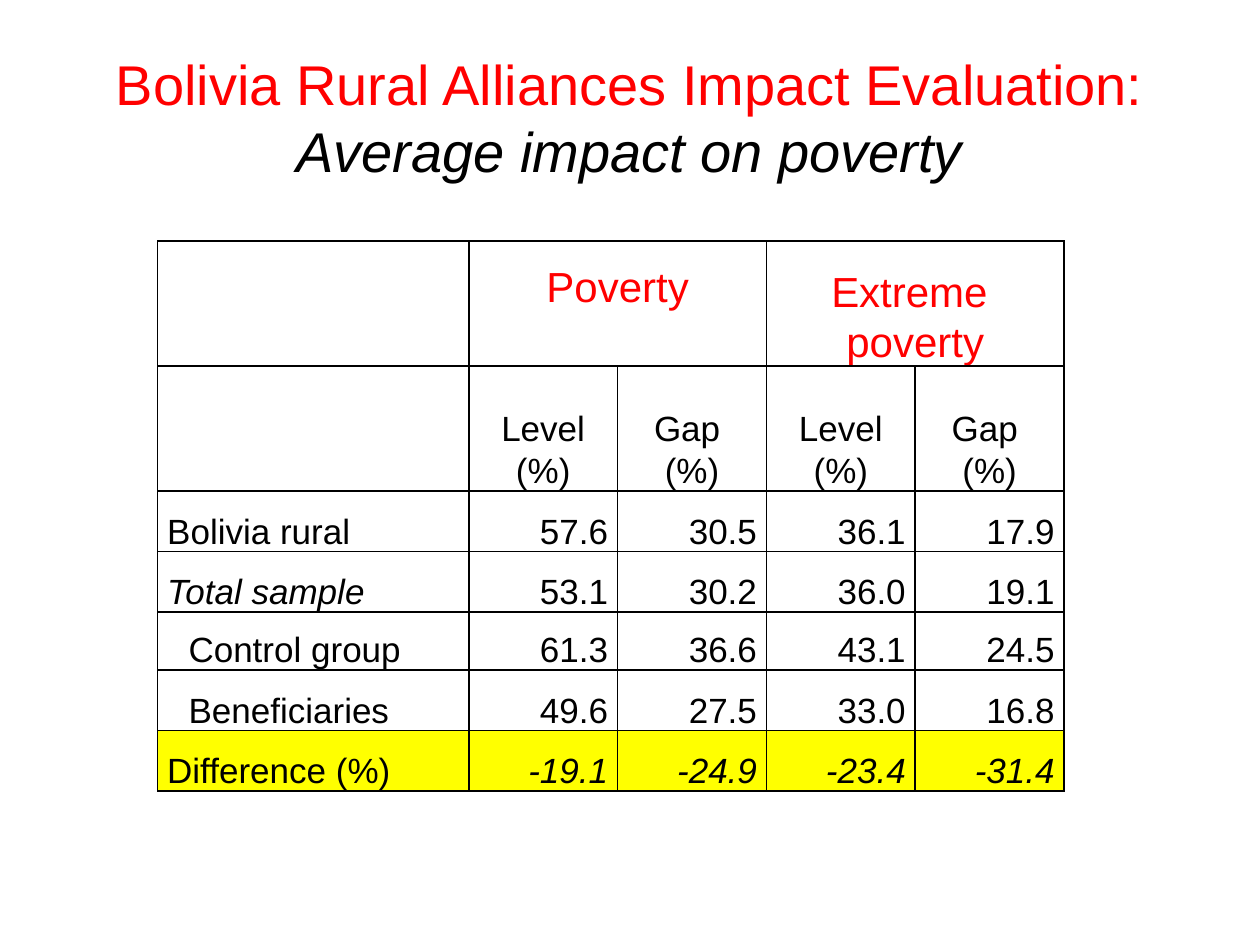
from dataclasses import dataclass

from lxml import etree
from pptx import Presentation
from pptx import util as u
from pptx.dml.color import RGBColor
from pptx.enum import text
from pptx.oxml import ns

COLORS = {"accent": "FF0000", "ink": "000000", "highlight": "FFFF00"}
FONT = "Arial"
CENTER, LEFT, RIGHT = text.PP_ALIGN.CENTER, text.PP_ALIGN.LEFT, text.PP_ALIGN.RIGHT


@dataclass(frozen=True)
class Entry:
    wording: str
    align: text.PP_ALIGN = RIGHT
    size: int = 20
    color: str = "ink"
    italic: bool = False
    indent: float = 0
    bottom: float = 0


@dataclass(frozen=True)
class Group:
    label: str
    values: tuple[str, ...]
    height: float = 1.22
    label_italic: bool = False
    values_italic: bool = False
    indent: float = 0
    fill: str | None = None


GROUPS = [
    Group("Bolivia rural", ("57.6", "30.5", "36.1", "17.9")),
    Group("Total sample", ("53.1", "30.2", "36.0", "19.1"), label_italic=True),
    Group("Control group", ("61.3", "36.6", "43.1", "24.5"), height=1.17, indent=0.43),
    Group("Beneficiaries", ("49.6", "27.5", "33.0", "16.8"), indent=0.43),
    Group("Difference (%)", ("-19.1", "-24.9", "-23.4", "-31.4"),
          values_italic=True, fill="highlight"),
]
MEASURES = {
    "Poverty": Entry("Poverty", CENTER, 24, "accent", bottom=1.1),
    "Extreme": Entry("Extreme  poverty", CENTER, 24, "accent"),
}
HEADINGS = ("Level (%)", "Gap  (%)") * len(MEASURES)
COLUMN_WIDTHS = [6.27] + [3.0] * len(HEADINGS)
ROW_HEIGHTS = [2.52, 2.52] + [group.height for group in GROUPS]


def apply(target, settings: dict) -> None:
    for attribute, value in settings.items():
        setattr(target, attribute, value)


def add_run(paragraph, wording: str, size: int, color: str, italic: bool) -> None:
    run = paragraph.add_run()
    run.text = wording
    apply(run.font, {"name": FONT, "size": u.Pt(size), "italic": italic})
    run.font.color.rgb = RGBColor.from_string(COLORS[color])


def style_cell(cell, fill: str | None) -> None:
    properties = cell._tc.get_or_add_tcPr()
    for side in ("lnL", "lnR", "lnT", "lnB"):
        line = etree.SubElement(properties, ns.qn(f"a:{side}"), w=str(u.Pt(1)))
        solid = etree.SubElement(line, ns.qn("a:solidFill"))
        etree.SubElement(solid, ns.qn("a:srgbClr"), val=COLORS["ink"])
    if fill:
        cell.fill.solid()
        cell.fill.fore_color.rgb = RGBColor.from_string(COLORS[fill])
    else:
        cell.fill.background()


def write_cell(cell, entry: Entry) -> None:
    apply(cell, {
        "vertical_anchor": text.MSO_ANCHOR.BOTTOM,
        "margin_left": u.Cm(0.19), "margin_right": u.Cm(0.19),
        "margin_top": 0, "margin_bottom": u.Cm(entry.bottom),
    })
    paragraph = cell.text_frame.paragraphs[0]
    apply(paragraph, {"alignment": entry.align, "line_spacing": 1.07})
    if entry.indent:
        paragraph._p.get_or_add_pPr().set("indent", str(u.Cm(entry.indent)))
    add_run(paragraph, entry.wording, entry.size, entry.color, entry.italic)


def add_heading(slide) -> None:
    title = slide.shapes.title
    apply(title, {"left": u.Cm(1.27), "top": u.Cm(0.76),
                  "width": u.Cm(22.86), "height": u.Cm(3.18)})
    apply(title.text_frame, {"word_wrap": True, "auto_size": text.MSO_AUTO_SIZE.NONE,
                             "vertical_anchor": text.MSO_ANCHOR.MIDDLE})
    paragraph = title.text_frame.paragraphs[0]
    paragraph.alignment = CENTER
    add_run(paragraph, "Bolivia Rural Alliances Impact Evaluation: ", 32, "accent", False)
    add_run(paragraph, "Average impact on poverty", 32, "ink", True)


def add_poverty_table(slide) -> None:
    table = slide.shapes.add_table(
        len(ROW_HEIGHTS), len(COLUMN_WIDTHS), u.Cm(3.18), u.Cm(4.86),
        u.Cm(sum(COLUMN_WIDTHS)), u.Cm(sum(ROW_HEIGHTS))).table
    apply(table, {"first_row": False, "horz_banding": False})
    for column, width in zip(table.columns, COLUMN_WIDTHS):
        column.width = u.Cm(width)
    fills = [None, None] + [group.fill for group in GROUPS]
    for row, height, fill in zip(table.rows, ROW_HEIGHTS, fills):
        row.height = u.Cm(height)
        for cell in row.cells:
            style_cell(cell, fill)

    for index, measure in enumerate(MEASURES.values()):
        first = 1 + 2 * index
        table.cell(0, first).merge(table.cell(0, first + 1))
        write_cell(table.cell(0, first), measure)
    for column, heading in enumerate(HEADINGS, 1):
        write_cell(table.cell(1, column), Entry(heading, CENTER))
    for row, group in enumerate(GROUPS, 2):
        write_cell(table.cell(row, 0), Entry(group.label, LEFT, italic=group.label_italic,
                                             indent=group.indent))
        for column, value in enumerate(group.values, 1):
            write_cell(table.cell(row, column), Entry(value, italic=group.values_italic))


def main() -> None:
    deck = Presentation()
    apply(deck, {"slide_width": u.Cm(25.4), "slide_height": u.Cm(19.05)})
    slide = deck.slides.add_slide(deck.slide_layouts[5])
    add_heading(slide)
    add_poverty_table(slide)
    deck.save("out.pptx")


if __name__ == "__main__":
    main()
